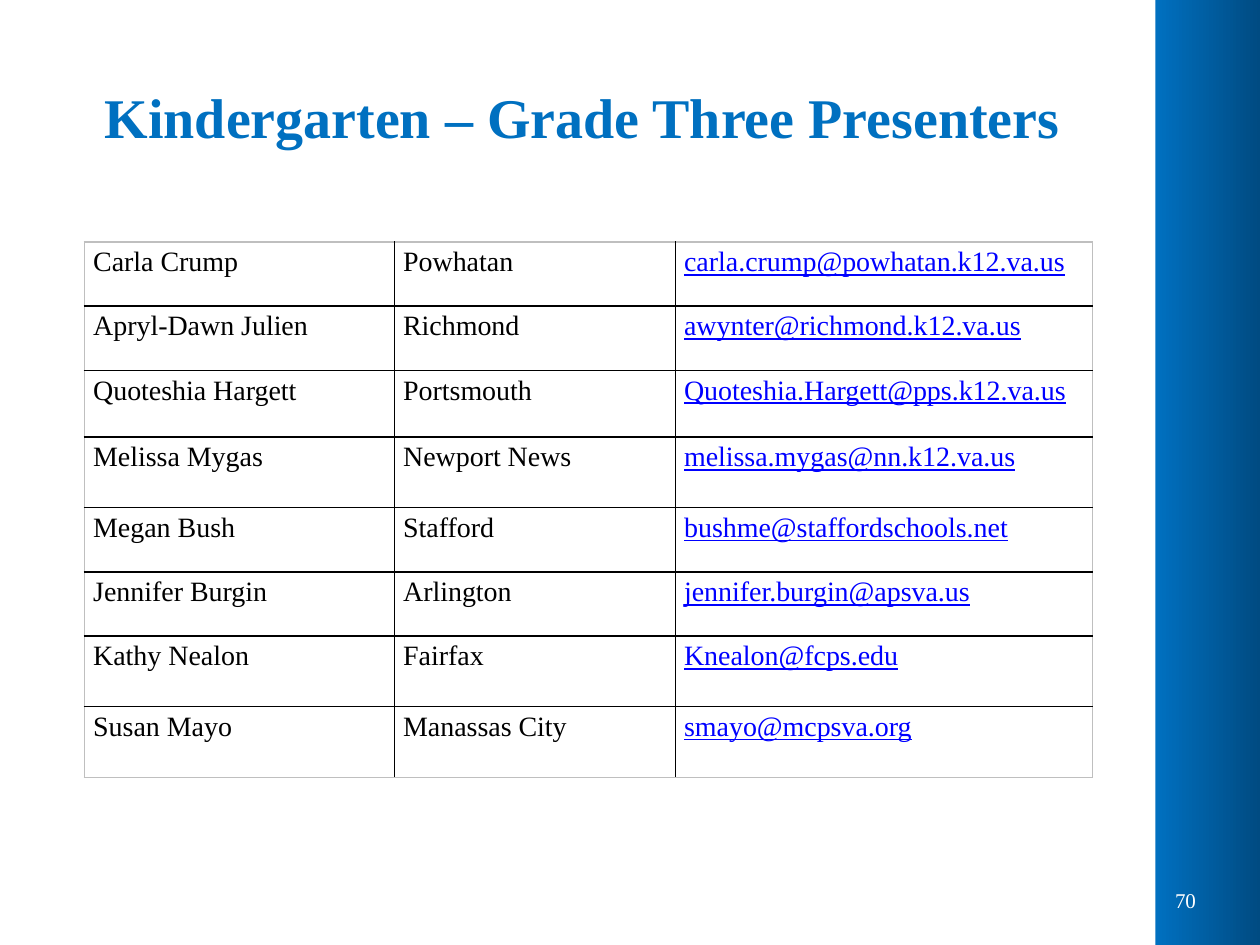
import pptx
import pptx.util
import pptx.dml.color
import pptx.enum.shapes
import pptx.enum.text
import pptx.oxml
import pptx.oxml.ns

Inches = pptx.util.Inches
Align = pptx.enum.text.PP_ALIGN
Anchor = pptx.enum.text.MSO_ANCHOR

TITLE = "Kindergarten – Grade Three Presenters"
PAGE = "70"
PEOPLE = [
    ("Carla Crump", "Powhatan", "carla.crump@powhatan.k12.va.us"),
    ("Apryl-Dawn Julien", "Richmond", "awynter@richmond.k12.va.us"),
    ("Quoteshia Hargett", "Portsmouth", "Quoteshia.Hargett@pps.k12.va.us"),
    ("Melissa Mygas", "Newport News", "melissa.mygas@nn.k12.va.us"),
    ("Megan Bush", "Stafford", "bushme@staffordschools.net"),
    ("Jennifer Burgin", "Arlington", "jennifer.burgin@apsva.us"),
    ("Kathy Nealon", "Fairfax", "Knealon@fcps.edu"),
    ("Susan Mayo", "Manassas City", "smayo@mcpsva.org"),
]
WIDTHS = [2.46, 2.23, 3.31]
HEIGHTS = [0.51, 0.51, 0.53, 0.56, 0.51, 0.51, 0.56, 0.56]
BLUE, NAVY, LINK = "0070C0", "004B82", "0000FF"
BLACK, WHITE, GREY = "000000", "FFFFFF", "BFBFBF"


def color(code):
    return pptx.dml.color.RGBColor.from_string(code)


def write(frame, text, size=16, ink=BLACK, bold=False, under=False,
          align=Align.LEFT, space=1.0):
    frame.word_wrap = True
    para = frame.paragraphs[0]
    para.alignment = align
    para.line_spacing = space
    run = para.add_run()
    run.text = text
    font = run.font
    font.name = "Times New Roman"
    font.size = pptx.util.Pt(size)
    font.bold = bold
    font.underline = under
    font.color.rgb = color(ink)


def border(cell, edges):
    props = cell._tc.get_or_add_tcPr()
    for spot, (side, code) in enumerate(edges.items()):
        line = pptx.oxml.parse_xml(
            f'<a:ln{side} {pptx.oxml.ns.nsdecls("a")} w="12700"><a:solidFill>'
            f'<a:srgbClr val="{code}"/></a:solidFill></a:ln{side}>')
        props.insert(spot, line)


def main():
    deck = pptx.Presentation()
    deck.slide_width, deck.slide_height = Inches(10), Inches(7.5)
    slide = deck.slides.add_slide(deck.slide_layouts[5])
    shapes = slide.shapes

    band = shapes.add_shape(pptx.enum.shapes.MSO_SHAPE.RECTANGLE,
                            Inches(9.17), 0, Inches(0.83), Inches(7.5))
    band.shadow.inherit = False
    band.line.fill.background()
    band.fill.gradient()
    band.fill.gradient_angle = 0
    for stop, code in zip(band.fill.gradient_stops, (BLUE, NAVY)):
        stop.color.rgb = color(code)

    title = shapes.title
    title.left, title.top = Inches(0.5), Inches(0.3)
    title.width, title.height = Inches(8.25), Inches(1.25)
    title.text_frame.vertical_anchor = Anchor.MIDDLE
    write(title.text_frame, TITLE, size=32, ink=BLUE, bold=True,
          align=Align.CENTER)

    page = shapes.add_textbox(Inches(9.17), Inches(6.95),
                              Inches(0.42), Inches(0.38))
    page.text_frame.vertical_anchor = Anchor.MIDDLE
    write(page.text_frame, PAGE, size=12, ink=WHITE, align=Align.RIGHT)

    rows, cols = len(PEOPLE), len(WIDTHS)
    table = shapes.add_table(rows, cols, Inches(0.67), Inches(1.92),
                             Inches(sum(WIDTHS)), Inches(sum(HEIGHTS))).table
    table.first_row = table.horz_banding = False
    for col, width in zip(table.columns, WIDTHS):
        col.width = Inches(width)
    for row, height in zip(table.rows, HEIGHTS):
        row.height = Inches(height)

    for r, person in enumerate(PEOPLE):
        for c, text in enumerate(person):
            cell = table.cell(r, c)
            cell.fill.background()
            cell.margin_left = cell.margin_right = Inches(0.07)
            cell.margin_top = cell.margin_bottom = 0
            mail = c == cols - 1
            write(cell.text_frame, text, ink=LINK if mail else BLACK,
                  under=mail, space=1.15)
            outer = {"L": c == 0, "R": mail, "T": r == 0, "B": r == rows - 1}
            border(cell, {side: GREY if edge else BLACK
                          for side, edge in outer.items()})

    deck.save("out.pptx")


if __name__ == "__main__":
    main()
